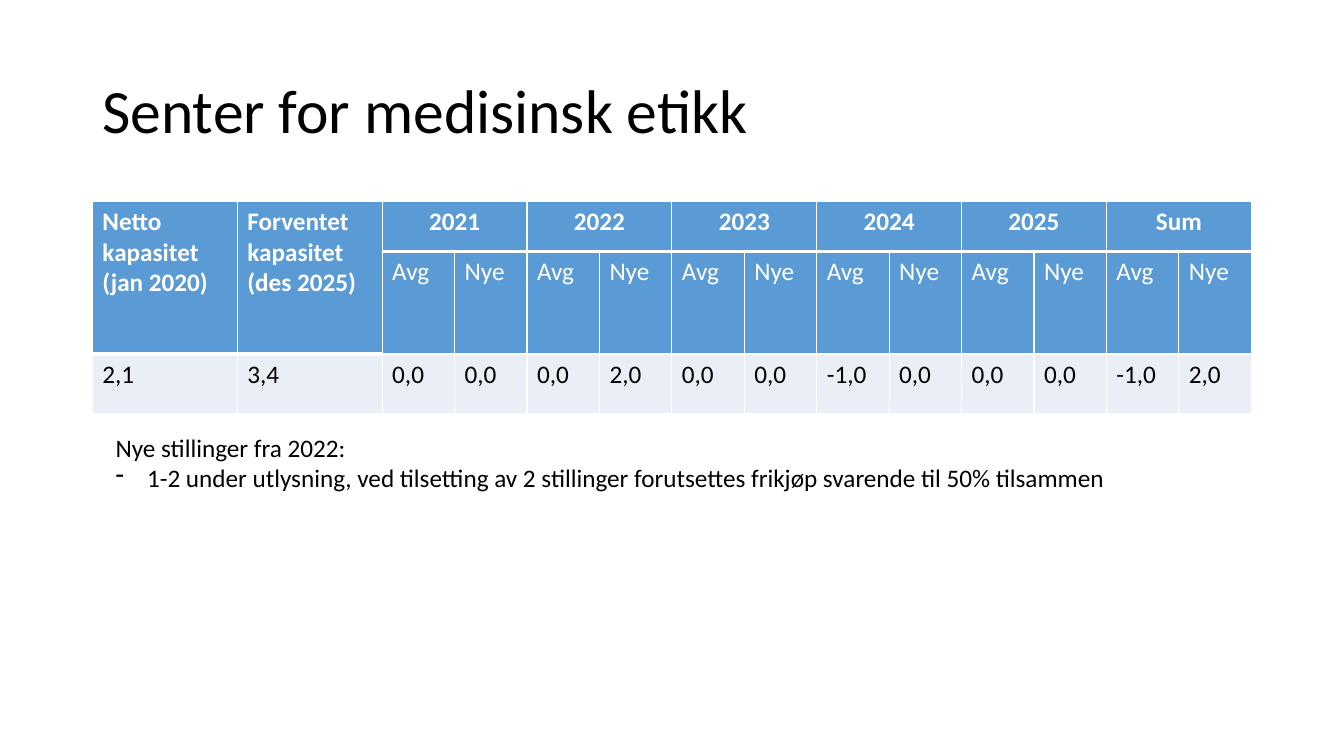
from lxml import etree
from pptx import Presentation
from pptx.dml.color import RGBColor
from pptx.enum.text import MSO_ANCHOR, MSO_AUTO_SIZE, PP_ALIGN
from pptx.oxml.ns import qn
from pptx.util import Pt

MIDDLE, TOP = MSO_ANCHOR.MIDDLE, MSO_ANCHOR.TOP
LEFT, CENTER = PP_ALIGN.LEFT, PP_ALIGN.CENTER
GROW, FIXED = MSO_AUTO_SIZE.SHAPE_TO_FIT_TEXT, MSO_AUTO_SIZE.NONE
BLACK = RGBColor(0x00, 0x00, 0x00)
WHITE = RGBColor(0xFF, 0xFF, 0xFF)
BLUE = RGBColor(0x5B, 0x9B, 0xD5)
PALE = RGBColor(0xEA, 0xEF, 0xF7)
FONT = "Calibri"

CAPACITIES = ["Netto kapasitet (jan 2020)", "Forventet kapasitet (des 2025)"]
PERIODS = ["2021", "2022", "2023", "2024", "2025", "Sum"]
CHANGES = ["Avg", "Nye"]
VALUES = ["2,1", "3,4", "0,0", "0,0", "0,0", "2,0", "0,0", "0,0",
          "-1,0", "0,0", "0,0", "0,0", "-1,0", "2,0"]
NOTES = [
    "Nye stillinger fra 2022:",
    "1-2 under utlysning, ved tilsetting av 2 stillinger forutsettes "
    "frikjøp svarende til 50% tilsammen",
]


def write(para, text, size=18, color=BLACK, bold=False, align=LEFT):
    span = para.add_run()
    span.text = text
    for name, value in {"name": FONT, "size": Pt(size), "bold": bold}.items():
        setattr(span.font, name, value)
    span.font.color.rgb = color
    para.alignment = align


def add_text_box(page, box, settings):
    frame = page.shapes.add_textbox(*map(Pt, box)).text_frame
    for name, value in settings.items():
        setattr(frame, name, value)
    return frame


def add_title(page, box):
    frame = add_text_box(page, box, {
        "word_wrap": True, "auto_size": FIXED, "vertical_anchor": MIDDLE})
    para = frame.paragraphs[0]
    para.line_spacing = 0.9
    write(para, "Senter for medisinsk etikk", size=44)


def add_borders(cell, bottom):
    properties = cell._tc.get_or_add_tcPr()
    for side, width in {"lnL": 1, "lnR": 1, "lnT": 1, "lnB": bottom}.items():
        line = etree.SubElement(properties, qn(f"a:{side}"), w=str(Pt(width)))
        fill = etree.SubElement(line, qn("a:solidFill"))
        etree.SubElement(fill, qn("a:srgbClr"), val=str(WHITE))


def fill_cell(cell, text, fill, bottom=1, **style):
    add_borders(cell, bottom)
    cell.fill.solid()
    cell.fill.fore_color.rgb = fill
    write(cell.text_frame.paragraphs[0], text, **style)


def add_capacity_table(page, box):
    left, top, width, height = box
    leading = len(CAPACITIES)
    unit = width / (len(PERIODS) + leading)
    header_height = 36
    table = page.shapes.add_table(3, len(VALUES), *map(Pt, box)).table
    for index, column in enumerate(table.columns):
        column.width = Pt(unit if index < leading else unit / len(CHANGES))
    for row, row_height in zip(
            table.rows, [header_height, header_height, height - 2 * header_height]):
        row.height = Pt(row_height)
    for column, label in enumerate(CAPACITIES):
        table.cell(0, column).merge(table.cell(1, column))
        fill_cell(table.cell(0, column), label, BLUE, bottom=3,
                  color=WHITE, bold=True)
    for index, period in enumerate(PERIODS):
        first = leading + index * len(CHANGES)
        table.cell(0, first).merge(table.cell(0, first + len(CHANGES) - 1))
        fill_cell(table.cell(0, first), period, BLUE, bottom=3,
                  color=WHITE, bold=True, align=CENTER)
        for offset, change in enumerate(CHANGES):
            fill_cell(table.cell(1, first + offset), change, BLUE, color=WHITE)
    for column, value in enumerate(VALUES):
        fill_cell(table.cell(2, column), value, PALE)


def add_notes(page, box):
    frame = add_text_box(page, box, {
        "word_wrap": False, "auto_size": GROW, "vertical_anchor": TOP})
    write(frame.paragraphs[0], NOTES[0])
    para = frame.add_paragraph()
    write(para, NOTES[1])
    properties = para._p.get_or_add_pPr()
    indent = Pt(22.5)
    properties.set("marL", str(indent))
    properties.set("indent", str(-indent))
    etree.SubElement(properties, qn("a:buChar"), char="-")


def main():
    deck = Presentation()
    deck.slide_width, deck.slide_height = Pt(960), Pt(540)
    page = deck.slides.add_slide(deck.slide_layouts[6])
    add_title(page, (66, 28.75, 828, 104.4))
    add_capacity_table(page, (66, 143.75, 828, 114.5))
    add_notes(page, (75.5, 305.3, 730, 72.7))
    deck.save("out.pptx")


if __name__ == "__main__":
    main()
